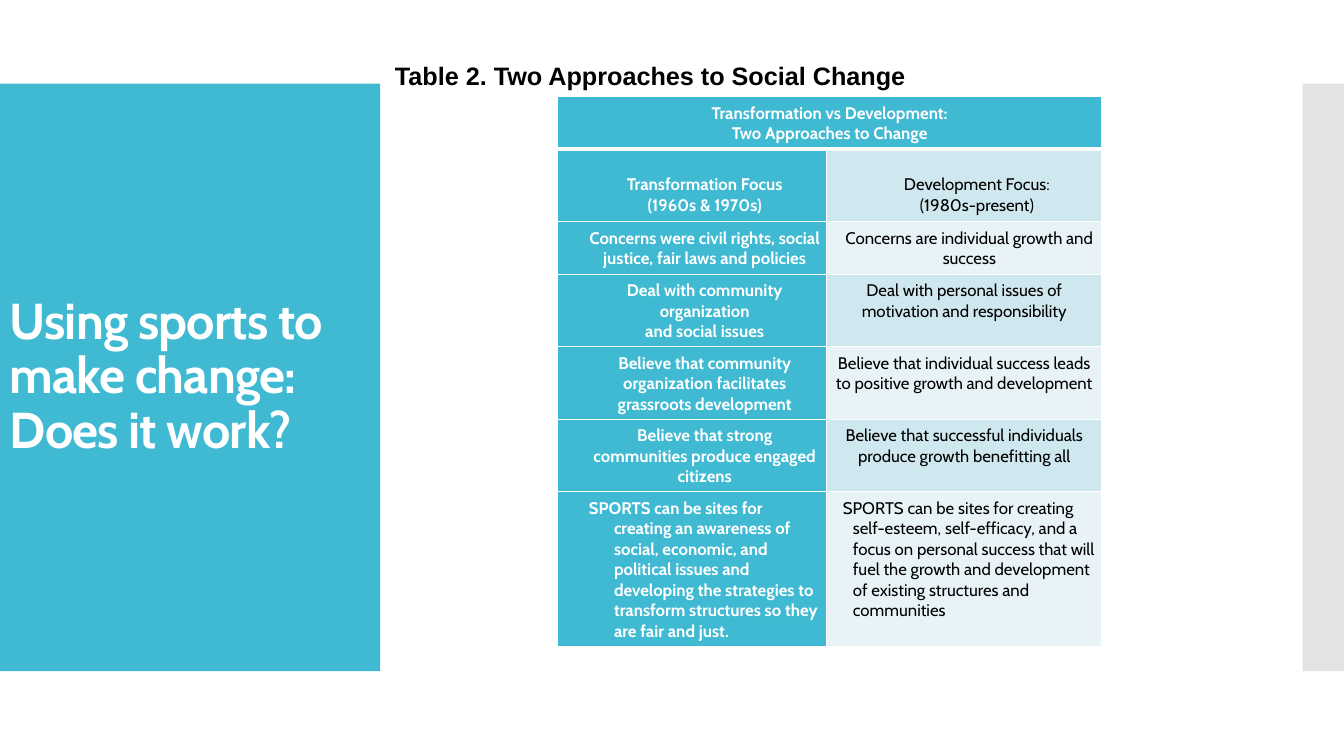
from lxml.etree import SubElement
from pptx import Presentation
from pptx.dml.color import RGBColor
from pptx.enum.shapes import MSO_SHAPE
from pptx.enum.text import MSO_ANCHOR, PP_ALIGN
from pptx.oxml.ns import qn
from pptx.util import Inches, Pt

# Content
TITLE = "Using sports to make change: Does it work?"
CAPTION = "Table 2. Two Approaches to Social Change"
HEADER = ["Transformation vs Development:", "Two Approaches to Change"]
# Each row: paragraphs on the left, paragraphs on the right
ROWS = [
    (["Transformation Focus", "(1960s & 1970s)"],
     ["Development Focus:", "(1980s-present)"]),
    (["Concerns were civil rights, social justice, fair laws and policies"],
     ["Concerns are individual growth and success"]),
    (["Deal with community organization", "and social issues"],
     ["Deal with personal issues of motivation and responsibility"]),
    (["Believe that community organization facilitates grassroots development"],
     ["Believe that individual success leads to positive growth and development"]),
    (["Believe that strong communities produce engaged citizens"],
     ["Believe that successful individuals produce growth benefitting all"]),
    (["SPORTS can be sites for creating an awareness of social, economic, and political "
      "issues and developing the strategies to transform structures so they are fair and just."],
     ["SPORTS can be sites for creating self-esteem, self-efficacy, and a focus on personal "
      "success that will fuel the growth and development of existing structures and communities"]),
]
COLUMN_WIDTHS = [2.67, 2.73]
ROW_HEIGHTS = [0.51, 0.72, 0.52, 0.72, 0.72, 0.72, 1.53]
RIGHT_INSETS = [0.31, 0.16, 0.06, 0.06, 0.06, 0.16]
LEFT_INSET, INSET = 0.31, 0.06
HANGING = (0.25, 0.1)  # last row, left and right

# Style
TEAL = RGBColor(0x40, 0xBA, 0xD2)
GRAY = RGBColor(0xC8, 0xC8, 0xC8)
WHITE = RGBColor(0xFF, 0xFF, 0xFF)
BLACK = RGBColor(0, 0, 0)
BANDS = (RGBColor(0xCF, 0xE7, 0xEE), RGBColor(0xE8, 0xF3, 0xF7))


def add_run(paragraph, text, font, size, color, bold):
    run = paragraph.add_run()
    run.text = text
    run.font.name, run.font.size = font, Pt(size)
    run.font.color.rgb, run.font.bold = color, bold
    return run


def add_panel(slide, left, width, color):
    panel = slide.shapes.add_shape(MSO_SHAPE.RECTANGLE, Inches(left), Inches(0.83),
                                   Inches(width), Inches(5.83))
    panel.shadow.inherit = False
    panel.fill.solid()
    panel.fill.fore_color.rgb = color
    panel.line.fill.background()
    return panel


def set_borders(cell, bottom=1, top=1):
    properties = cell._tc.get_or_add_tcPr()
    for side, points in (("L", 1), ("R", 1), ("T", top), ("B", bottom)):
        line = SubElement(properties, qn(f"a:ln{side}"), w=str(Pt(points)))
        fill = SubElement(line, qn("a:solidFill"))
        SubElement(fill, qn("a:srgbClr"), val=str(WHITE))


def fill_cell(cell, lines, fill, color, bold, inset=INSET, hanging=0):
    cell.fill.solid()
    cell.fill.fore_color.rgb = fill
    cell.margin_left = Inches(inset)
    cell.margin_right = cell.margin_top = cell.margin_bottom = Inches(INSET)
    for index, text in enumerate(lines):
        frame = cell.text_frame
        paragraph = frame.paragraphs[0] if index == 0 else frame.add_paragraph()
        paragraph.alignment = PP_ALIGN.LEFT if hanging else PP_ALIGN.CENTER
        if hanging:
            properties = paragraph._p.get_or_add_pPr()
            properties.set("marL", str(Inches(hanging)))
            properties.set("indent", str(-Inches(hanging)))
        add_run(paragraph, text, "Cabin", 12, color, bold)


presentation = Presentation()
presentation.slide_width, presentation.slide_height = Inches(13.33), Inches(7.5)
slide = presentation.slides.add_slide(presentation.slide_layouts[6])

# Side panels
add_panel(slide, 0, 3.77, TEAL)
edge = add_panel(slide, 12.92, 0.41, GRAY)
edge_color = edge._element.spPr.find(qn("a:solidFill")).find(qn("a:srgbClr"))
SubElement(edge_color, qn("a:alpha"), val="50000")

# Title
title = slide.shapes.add_textbox(0, Inches(1.23), Inches(3.54), Inches(5.03))
title.text_frame.word_wrap = True
title.text_frame.vertical_anchor = MSO_ANCHOR.MIDDLE
paragraph = title.text_frame.paragraphs[0]
paragraph.line_spacing = 0.9
run = add_run(paragraph, TITLE, "Cabin", 36, WHITE, True)
run.font._element.set("spc", "-60")

# Table
table = slide.shapes.add_table(
    len(ROW_HEIGHTS), len(COLUMN_WIDTHS), Inches(5.53), Inches(0.96),
    Inches(sum(COLUMN_WIDTHS)), Inches(sum(ROW_HEIGHTS))).table
for column, width in zip(table.columns, COLUMN_WIDTHS):
    column.width = Inches(width)
for row, height in zip(table.rows, ROW_HEIGHTS):
    row.height = Inches(height)
for row_index, row in enumerate(table.rows):
    for cell in row.cells:
        set_borders(cell, bottom=3 if row_index == 0 else 1, top=3 if row_index == 1 else 1)

table.cell(0, 0).merge(table.cell(0, 1))
fill_cell(table.cell(0, 0), HEADER, TEAL, WHITE, True)
for index, (left_lines, right_lines) in enumerate(ROWS):
    left, right = table.cell(index + 1, 0), table.cell(index + 1, 1)
    left_hang, right_hang = HANGING if index == len(ROWS) - 1 else (0, 0)
    right_inset = LEFT_INSET if index == 0 else RIGHT_INSETS[index]
    fill_cell(left, left_lines, TEAL, WHITE, True, LEFT_INSET, left_hang)
    fill_cell(right, right_lines, BANDS[index % 2], BLACK, False, right_inset, right_hang)
    if index == 0:
        left.vertical_anchor = right.vertical_anchor = MSO_ANCHOR.BOTTOM

# Caption
caption = slide.shapes.add_textbox(Inches(3.79), Inches(0.55), Inches(5.32), Inches(0.4))
caption.text_frame.word_wrap = False
paragraph = caption.text_frame.paragraphs[0]
paragraph.alignment = PP_ALIGN.CENTER
add_run(paragraph, CAPTION, "Arial", 18, BLACK, True)

presentation.save("out.pptx")
